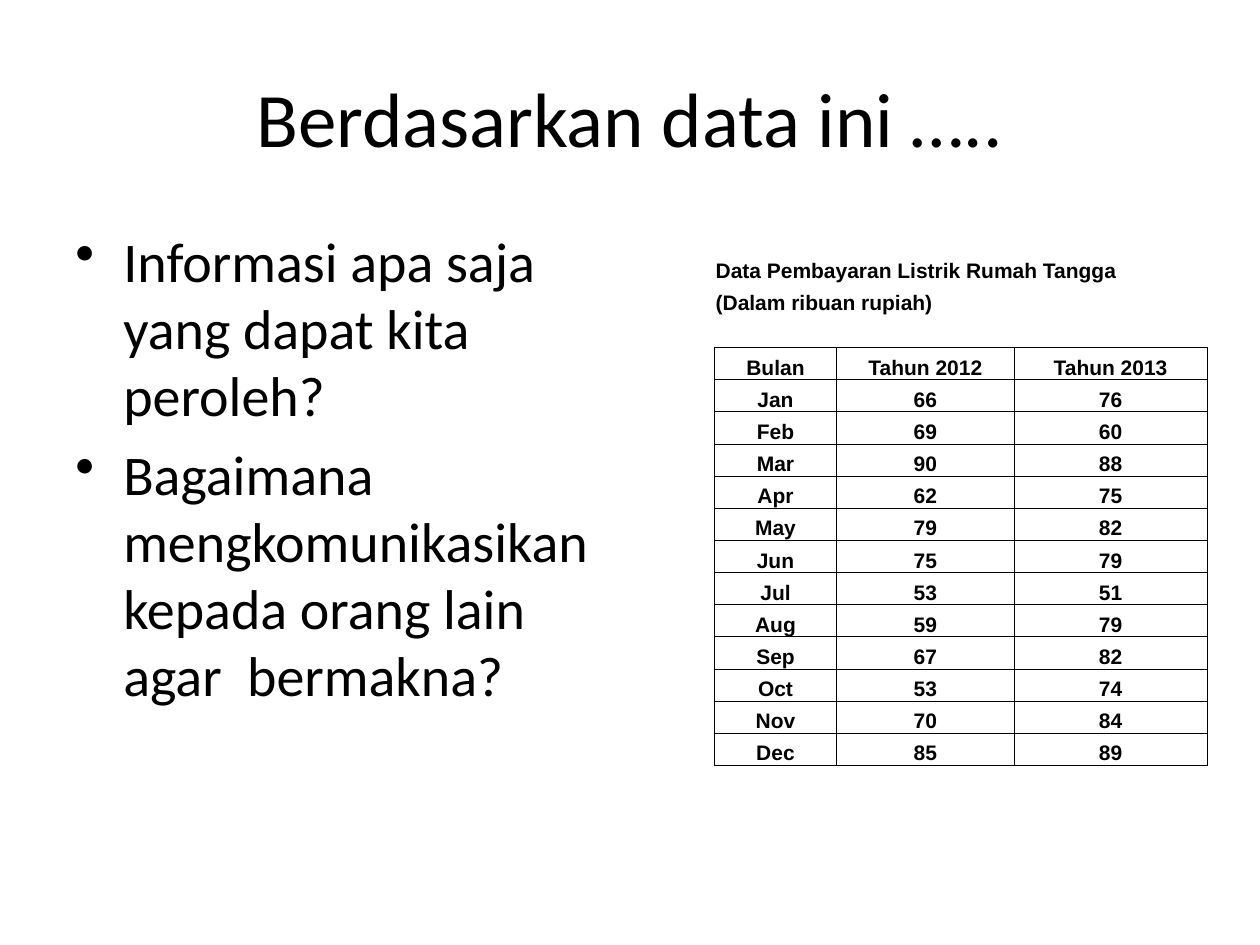
from lxml.etree import SubElement
from pptx import Presentation
from pptx.dml.color import RGBColor
from pptx.enum.text import MSO_ANCHOR as Anchor, PP_ALIGN as Align
from pptx.oxml.ns import qn
from pptx.util import Inches, Pt

WIDTH, HEIGHT = 10, 7.5
NO_STYLE = "{2D5ABB26-0587-4C30-8999-92F81FD0307C}"

TITLE = "Berdasarkan data ini ….."
QUESTIONS = [
    "Informasi apa saja yang dapat kita peroleh?",
    "Bagaimana mengkomunikasikan kepada orang lain agar  bermakna?",
]
CAPTIONS = ["Data Pembayaran Listrik Rumah Tangga", "(Dalam ribuan rupiah)", ""]
HEADINGS = ("Bulan", "Tahun 2012", "Tahun 2013")
MONTHS = "Jan Feb Mar Apr May Jun Jul Aug Sep Oct Nov Dec".split()
PAID_2012 = [66, 69, 90, 62, 79, 75, 53, 59, 67, 53, 70, 85]
PAID_2013 = [76, 60, 88, 75, 82, 79, 51, 79, 82, 74, 84, 89]


def color(hex_code):
    return RGBColor.from_string(hex_code)


class SlideBuilder:
    """Holds the style and the slide; places are shares of the slide's size."""

    ink = "000000"
    text_font, table_font = "Calibri", "Arial"
    title_size, body_size, table_size = 44, 32, 12
    border_width = 0.5

    def __init__(self, slide):
        self.slide = slide

    def place(self, left, top, width, height):
        return (Inches(left * WIDTH), Inches(top * HEIGHT),
                Inches(width * WIDTH), Inches(height * HEIGHT))

    def style(self, paragraph, font, size, bold=False):
        paragraph.font.name = font
        paragraph.font.size = Pt(size)
        paragraph.font.bold = bold
        paragraph.font.color.rgb = color(self.ink)

    def text_frame(self, area):
        frame = self.slide.shapes.add_textbox(*self.place(*area)).text_frame
        frame.word_wrap = True
        return frame

    def title(self, text, area):
        frame = self.text_frame(area)
        frame.vertical_anchor = Anchor.MIDDLE
        frame.text = text
        heading = frame.paragraphs[0]
        heading.alignment = Align.CENTER
        self.style(heading, self.text_font, self.title_size)

    def bullets(self, items, area):
        frame = self.text_frame(area)
        frame.text = "\n".join(items)
        for item in frame.paragraphs:
            item.space_before = Pt(0.2 * self.body_size)
            self.style(item, self.text_font, self.body_size)
            props = item._p.get_or_add_pPr()
            props.set("marL", str(Inches(0.38)))
            props.set("indent", str(Inches(-0.38)))
            # The bullet goes before the default run properties
            mark = SubElement(props, qn("a:buChar"), char="•")
            props.find(qn("a:defRPr")).addprevious(mark)

    def border(self, cell, sides):
        for side in sides:
            line = SubElement(cell._tc.get_or_add_tcPr(), qn(f"a:ln{side}"),
                              w=str(Pt(self.border_width)))
            fill = SubElement(line, qn("a:solidFill"))
            SubElement(fill, qn("a:srgbClr"), val=self.ink)

    def cell(self, cell, text, align, sides):
        cell.margin_left = cell.margin_right = cell.margin_top = Inches(0.01)
        cell.margin_bottom = 0
        cell.vertical_anchor = Anchor.BOTTOM
        cell.text = str(text)
        entry = cell.text_frame.paragraphs[0]
        entry.alignment = align
        self.style(entry, self.table_font, self.table_size, bold=True)
        # Keeps rows without text at their height
        SubElement(entry._p, qn("a:endParaRPr"), sz=str(self.table_size * 100))
        self.border(cell, sides)
        cell.fill.background()

    def table(self, captions, records, area, column_widths, first_height):
        count = len(captions) + len(records)
        place = self.place(*area)
        table = self.slide.shapes.add_table(count, len(column_widths), *place).table
        table.first_row = table.horz_banding = False
        table._tbl.tblPr.find(qn("a:tableStyleId")).text = NO_STYLE
        for column, width in zip(table.columns, column_widths):
            column.width = Inches(width)
        # The first row is taller; the others share the rest
        top_height = Inches(first_height)
        for index, row in enumerate(table.rows):
            row.height = (place[3] - top_height) // (count - 1) if index else top_height

        blanks = [""] * (len(column_widths) - 1)
        for r, caption in enumerate(captions):
            sides = "B" if r == len(captions) - 1 else ""
            for c, text in enumerate([caption, *blanks]):
                self.cell(table.cell(r, c), text, Align.LEFT, sides)
        for r, record in enumerate(records, len(captions)):
            for c, text in enumerate(record):
                self.cell(table.cell(r, c), text, Align.CENTER, "LRTB")
        return table


def main():
    deck = Presentation()
    deck.slide_width, deck.slide_height = Inches(WIDTH), Inches(HEIGHT)
    builder = SlideBuilder(deck.slides.add_slide(deck.slide_layouts[6]))

    # Title and questions
    builder.title(TITLE, (0.05, 0.04, 0.9, 1 / 6))
    builder.bullets(QUESTIONS, (0.05, 0.233, 0.458, 0.66))

    # Electricity payments by month
    payments = builder.table(
        CAPTIONS, [HEADINGS, *zip(MONTHS, PAID_2012, PAID_2013)],
        (0.567, 0.233, 0.392, 0.577), (0.97, 1.41, 1.53), 0.5)
    payments.cell(0, 0).merge(payments.cell(0, 2))
    payments.cell(1, 0).merge(payments.cell(1, 1))

    deck.save("out.pptx")


if __name__ == "__main__":
    main()
